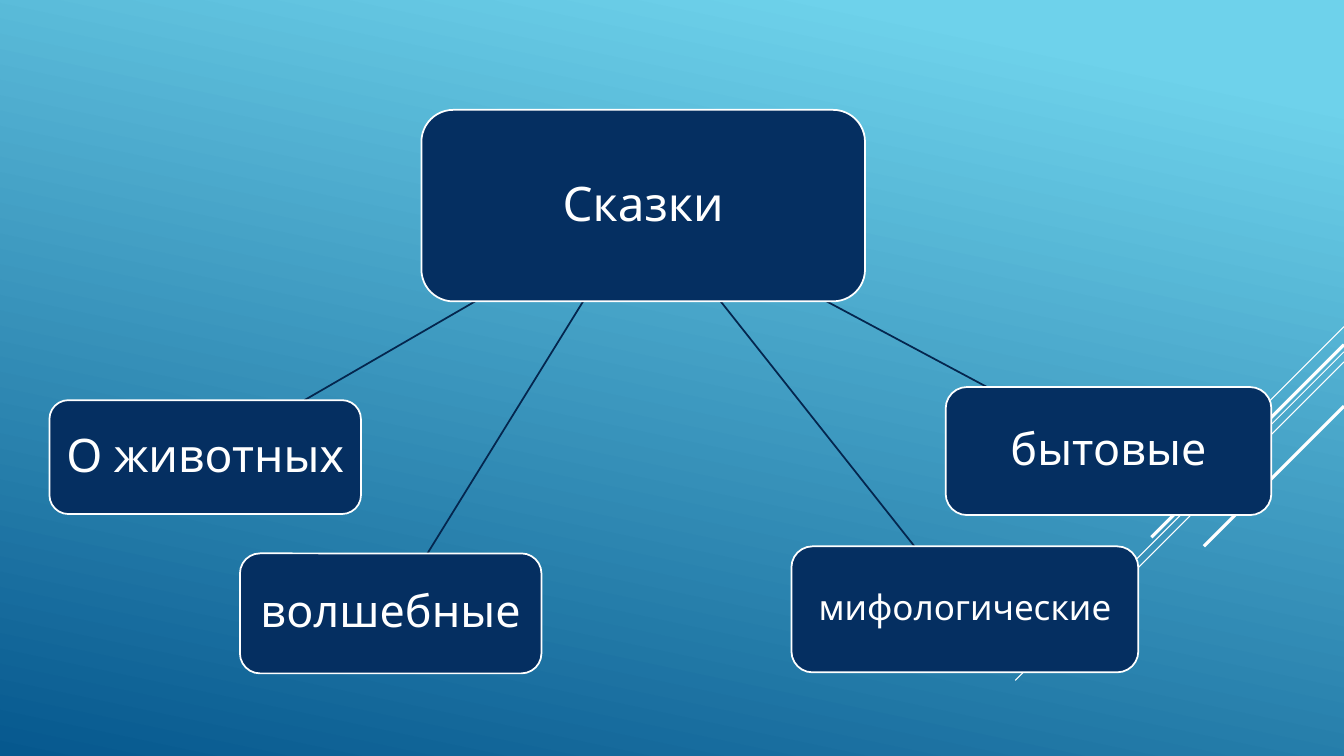
"""Build a slide with a tree of the kinds of fairy tales."""
from pptx import Presentation
from pptx import util as u
from pptx.dml.color import RGBColor
from pptx.enum import shapes, text
from pptx.oxml.ns import qn
from lxml import etree

Inches = u.Inches
NAVY, EDGE, WHITE = "052F61", "04264E", "FFFFFF"


def rgb(value):
    return RGBColor.from_string(value)


def add_line(s, x1, y1, x2, y2, color, width):
    c = s.shapes.add_connector(shapes.MSO_CONNECTOR.STRAIGHT,
                               Inches(x1), Inches(y1), Inches(x2), Inches(y2))
    c.line.color.rgb = rgb(color)
    c.line.width = u.Pt(width)
    etree.SubElement(c._element.spPr, qn("a:effectLst"))


prs = Presentation()
prs.slide_width, prs.slide_height = Inches(13.33), Inches(7.5)
s = prs.slides.add_slide(prs.slide_layouts[6])

fill = s.background.fill
fill.gradient()
fill.gradient_angle = 360 - 102
for stop, (position, color) in zip(fill.gradient_stops, [(0.1, "6ED2EB"), (1, "06588E")]):
    stop.position = position
    stop.color.rgb = rgb(color)

for top, run, width in [(3.24, 1, 0.75), (3.49, 3.26, 0.75), (3.59, 2.07, 0.75),
                        (3.42, 1.91, 2.25), (4.03, 1.39, 2.25)]:
    add_line(s, 13.33, top, 13.33 - run, top + run, WHITE, width)

for x1, x2, y2 in [(5.79, 4.24, 5.49), (8.18, 9.79, 3.84),
                   (7.14, 9.07, 5.42), (4.73, 3.02, 3.97)]:
    add_line(s, x1, 2.98, x2, y2, EDGE, 1.25)

boxes = [
    ("Сказки", 34, 4.18, 1.09, 4.4, 1.9),
    ("волшебные", 32, 2.38, 5.49, 2.99, 1.19),
    ("бытовые", 32, 9.38, 3.84, 3.23, 1.27),
    ("мифологические", 25, 7.85, 5.42, 3.44, 1.25),
    ("О животных", 33, 0.49, 3.97, 3.09, 1.13),
]
for label, size, x, y, w, h in boxes:
    sp = s.shapes.add_shape(shapes.MSO_SHAPE.ROUNDED_RECTANGLE,
                            Inches(x), Inches(y), Inches(w), Inches(h))
    sp.shadow.inherit = False
    sp.fill.solid()
    sp.fill.fore_color.rgb = rgb(NAVY)
    sp.line.color.rgb = rgb(WHITE)
    sp.line.width = u.Pt(1.25)
    tf = sp.text_frame
    tf.word_wrap = True
    tf.vertical_anchor = text.MSO_ANCHOR.MIDDLE
    tf.margin_left = tf.margin_right = tf.margin_top = tf.margin_bottom = Inches(0.09)
    p = tf.paragraphs[0]
    p.alignment = text.PP_ALIGN.CENTER
    p.line_spacing = 0.9
    r = p.add_run()
    r.text = label
    r.font.name = "League Spartan"
    r.font.size = u.Pt(size)
    r.font.color.rgb = rgb(WHITE)

prs.save("out.pptx")
